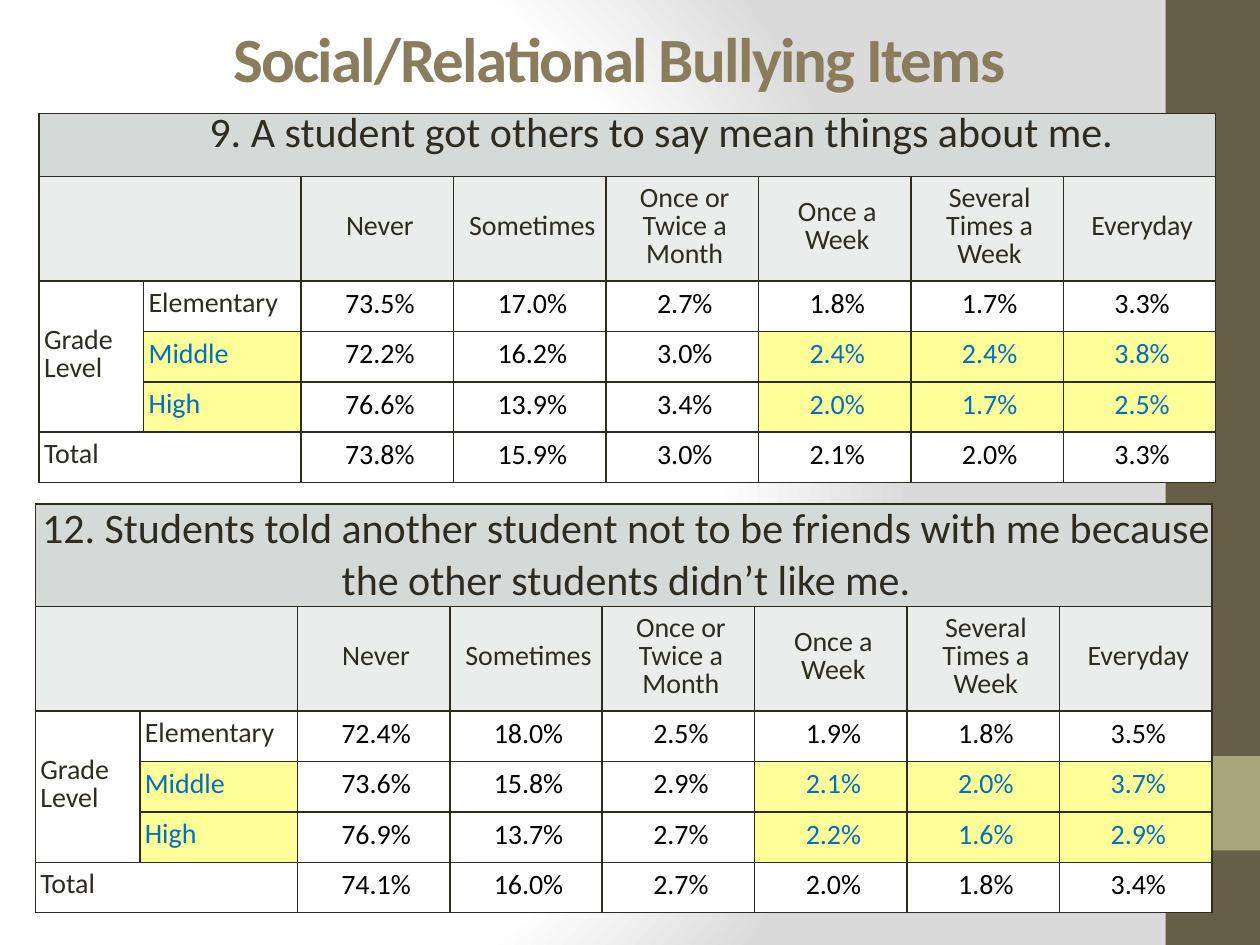
from pptx import Presentation, oxml
from pptx.dml.color import RGBColor
from pptx.enum import shapes, text
from pptx.oxml import ns
from pptx.util import Inches, Pt

TITLE = "Social/Relational Bullying Items"
HEADERS = ["Never", "Sometimes", "Once or Twice a Month", "Once a Week",
           "Several Times a Week", "Everyday"]
LEVELS = ["Elementary", "Middle", "High", "Total"]
TABLES = [
    {"question": "9. A student got others to say mean things about me.",
     "left": 0.31, "top": 0.9, "question_height": 0.5,
     "question_format": {"level": 1, "indent": 0.54, "spacing": Pt(16)},
     "values": [["73.5%", "17.0%", "2.7%", "1.8%", "1.7%", "3.3%"],
                ["72.2%", "16.2%", "3.0%", "2.4%", "2.4%", "3.8%"],
                ["76.6%", "13.9%", "3.4%", "2.0%", "1.7%", "2.5%"],
                ["73.8%", "15.9%", "3.0%", "2.1%", "2.0%", "3.3%"]]},
    {"question": "12. Students told another student not to be friends with me "
                 "because the other students didn’t like me.",
     "left": 0.28, "top": 4, "question_height": 0.81,
     "question_format": {"spacing": None},
     "values": [["72.4%", "18.0%", "2.5%", "1.9%", "1.8%", "3.5%"],
                ["73.6%", "15.8%", "2.9%", "2.1%", "2.0%", "3.7%"],
                ["76.9%", "13.7%", "2.7%", "2.2%", "1.6%", "2.9%"],
                ["74.1%", "16.0%", "2.7%", "2.0%", "1.8%", "3.4%"]]},
]
SIDE_BARS = [("675E47", 0, 7.5), ("A9A57C", 6, 0.75)]  # colour, top, height
COLUMN_WIDTHS = [0.83, 1.25] + [1.21] * len(HEADERS)
BODY_HEIGHTS = [0.83] + [0.4] * len(LEVELS)
FONT = "Calibri"
INK, BLACK, BLUE = "2F2B20", "000000", "0070C0"
WHITE, YELLOW, BAND, HEADER_FILL = "FFFFFF", "FFFF99", "D5DAD8", "EAEDEB"
CENTER, LEFT = text.PP_ALIGN.CENTER, text.PP_ALIGN.LEFT
BACKGROUND_STOPS = [(0, "FFFFFF"), (75, "FFFFFF"), (100, "DADADA")]


def rgb(value):
    return RGBColor.from_string(value)


def set_background(slide):
    """Fill the slide with a circular gradient, which python-pptx cannot make."""
    stops = "".join(f'<a:gs pos="{position * 1000}"><a:srgbClr val="{color}"/></a:gs>'
                    for position, color in BACKGROUND_STOPS)
    slide.background.fill.solid()
    properties = slide.background._cSld.find(ns.qn("p:bg")).find(ns.qn("p:bgPr"))
    properties.replace(properties[0], oxml.parse_xml(
        f'<a:gradFill {ns.nsdecls("a")} rotWithShape="1"><a:gsLst>{stops}</a:gsLst>'
        '<a:path path="circle"><a:fillToRect l="20000" t="50000" r="100000" b="50000"/>'
        '</a:path></a:gradFill>'))


def add_borders(cell):
    properties = cell._tc.get_or_add_tcPr()
    for side in ("lnL", "lnR", "lnT", "lnB"):
        properties.append(oxml.parse_xml(
            f'<a:{side} {ns.nsdecls("a")} w="{Pt(1)}"><a:solidFill>'
            f'<a:srgbClr val="{INK}"/></a:solidFill></a:{side}>'))


def format_font(font, size, color, bold=False):
    values = {"name": FONT, "size": Pt(size), "bold": bold}
    for name, value in values.items():
        setattr(font, name, value)
    font.color.rgb = rgb(color)


def write_cell(cell, words, fill, color=INK, align=CENTER, size=16,
               level=0, indent=0.04, spacing=Pt(16), inset=0):
    margins = {"margin_left": inset, "margin_top": inset,
               "margin_right": inset, "margin_bottom": 0}
    for name, value in margins.items():
        setattr(cell, name, Inches(value))
    cell.vertical_anchor = text.MSO_ANCHOR.MIDDLE
    cell.fill.solid()
    cell.fill.fore_color.rgb = rgb(fill)
    paragraph = cell.text_frame.paragraphs[0]
    for name, value in {"alignment": align, "level": level, "line_spacing": spacing}.items():
        setattr(paragraph, name, value)
    properties = paragraph._p.get_or_add_pPr()
    properties.set("marL", str(Inches(indent)))
    properties.set("indent", "0")
    if words:
        run = paragraph.add_run()
        run.text = words
        format_font(run.font, size, color)


def add_survey_table(slide, survey):
    heights = [survey["question_height"]] + BODY_HEIGHTS
    frame = slide.shapes.add_table(
        len(heights), len(COLUMN_WIDTHS), Inches(survey["left"]), Inches(survey["top"]),
        Inches(sum(COLUMN_WIDTHS)), Inches(sum(heights)))
    table = frame.table
    table.first_row = table.horz_banding = False
    for column, width in zip(table.columns, COLUMN_WIDTHS):
        column.width = Inches(width)
    for row, height in zip(table.rows, heights):
        row.height = Inches(height)
    for cell in table.iter_cells():
        add_borders(cell)

    last_row, last_column = len(heights) - 1, len(COLUMN_WIDTHS) - 1
    for start, end in [((0, 0), (0, last_column)), ((1, 0), (1, 1)),
                       ((2, 0), (last_row - 1, 0)), ((last_row, 0), (last_row, 1))]:
        table.cell(*start).merge(table.cell(*end))

    write_cell(table.cell(0, 0), survey["question"], BAND, size=24,
               **survey["question_format"])
    write_cell(table.cell(1, 0), "", HEADER_FILL)
    for column, header in enumerate(HEADERS, 2):
        write_cell(table.cell(1, column), header, HEADER_FILL)
    write_cell(table.cell(2, 0), "Grade Level", WHITE, align=LEFT)

    for row, (level, values) in enumerate(zip(LEVELS, survey["values"]), 2):
        marked = level in ("Middle", "High")
        write_cell(table.cell(row, 0 if level == "Total" else 1), level,
                   YELLOW if marked else WHITE, BLUE if marked else INK, LEFT)
        for column, value in enumerate(values, 2):
            weekly = marked and column >= 5
            write_cell(table.cell(row, column), value, YELLOW if weekly else WHITE,
                       BLUE if weekly else BLACK, inset=0.01)


def add_side_bar(slide, color, top, height):
    bar = slide.shapes.add_shape(shapes.MSO_SHAPE.RECTANGLE, Inches(9.25), Inches(top),
                                 Inches(0.75), Inches(height))
    bar.shadow.inherit = False
    bar.fill.solid()
    bar.fill.fore_color.rgb = rgb(color)
    bar.line.fill.background()


def format_title(title):
    box = {"left": 1.75, "top": 0.08, "width": 7.67, "height": 0.75}
    for name, value in box.items():
        setattr(title, name, Inches(value))
    title.text_frame.text = TITLE
    title.text_frame.vertical_anchor = text.MSO_ANCHOR.MIDDLE
    paragraph = title.text_frame.paragraphs[0]
    paragraph.alignment = LEFT
    run = paragraph.runs[0]
    format_font(run.font, 36, "897D5D", bold=True)
    run._r.get_or_add_rPr().set("spc", "-100")


def main():
    presentation = Presentation()
    presentation.slide_width, presentation.slide_height = Inches(10), Inches(7.5)
    slide = presentation.slides.add_slide(presentation.slide_layouts[5])
    set_background(slide)
    for bar in SIDE_BARS:
        add_side_bar(slide, *bar)
    format_title(slide.shapes.title)
    for survey in TABLES:
        add_survey_table(slide, survey)
    presentation.save("out.pptx")


if __name__ == "__main__":
    main()
